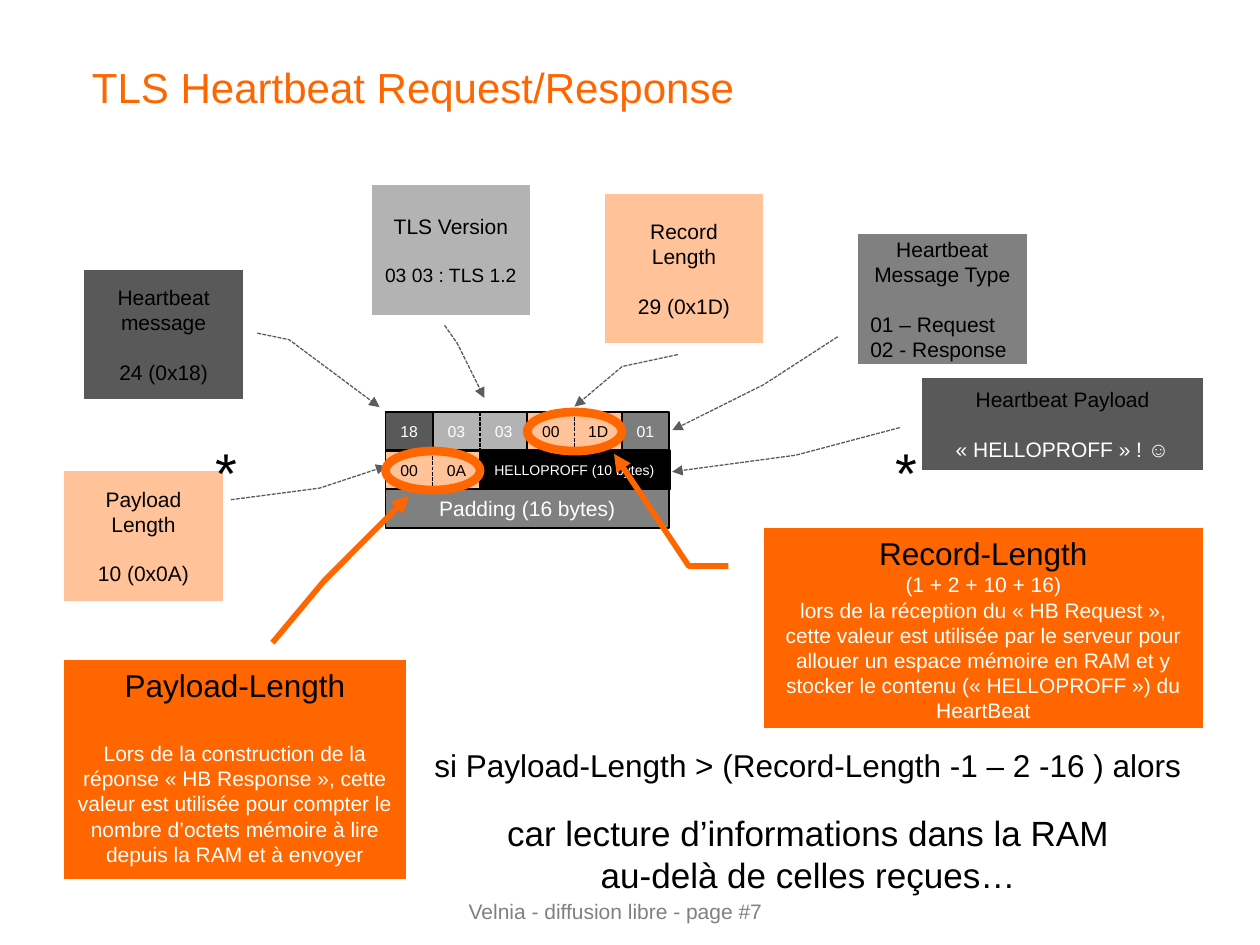
from lxml import etree
from pptx import Presentation
from pptx import util as u
from pptx.dml.color import RGBColor
from pptx.enum import dml, shapes, text
from pptx.oxml.ns import qn

BLACK = RGBColor(0x00, 0x00, 0x00)
WHITE = RGBColor(0xFF, 0xFF, 0xFF)
ORANGE = RGBColor(0xFF, 0x66, 0x00)
PEACH = RGBColor(0xFF, 0xC2, 0x99)
DARK = RGBColor(0x59, 0x59, 0x59)
LEADER = RGBColor(0x5C, 0x5C, 0x5C)
TYPE_GRAY = RGBColor(0x7D, 0x7D, 0x7D)
GRAY = RGBColor(0x80, 0x80, 0x80)
LIGHT = RGBColor(0xB3, 0xB3, 0xB3)

LEFT, CENTER = text.PP_ALIGN.LEFT, text.PP_ALIGN.CENTER
TOP, MIDDLE = text.MSO_ANCHOR.TOP, text.MSO_ANCHOR.MIDDLE
DASH = dml.MSO_LINE.SQUARE_DOT
LINE_GAP = 13.8  # height of one 12 pt line

PACKET_LEFT, PACKET_WIDTH = 3.06, 2.25
BYTE_WIDTH, BYTE_HEIGHT = PACKET_WIDTH / 6, 0.3
ROW_TOPS = (3.27, 3.58, 3.88)


def write(paragraph, content, size=12, color=BLACK, align=CENTER, gap=0):
    paragraph.text = content
    paragraph.alignment = align
    paragraph.space_before = u.Pt(gap)
    for run in paragraph.runs:
        run.font.name = "Arial"
        run.font.size = u.Pt(size)
        run.font.color.rgb = color


def inches(*lengths):
    return [u.Inches(length) for length in lengths]


class PacketSlide:
    """Holds the slide and draws its kinds of element."""

    def __init__(self, slide):
        self.slide = slide

    def title(self, content, *box):
        shape = self.slide.shapes.title
        shape.left, shape.top, shape.width, shape.height = inches(*box)
        frame = shape.text_frame
        frame.vertical_anchor = TOP
        frame.margin_left = frame.margin_right = u.Inches(0.08)
        frame.margin_top = frame.margin_bottom = u.Inches(0.04)
        write(frame.paragraphs[0], content, size=24, color=ORANGE, align=LEFT)

    def label(self, content, *box, anchor=TOP, margin=0.1, **style):
        frame = self.slide.shapes.add_textbox(*inches(*box)).text_frame
        frame.word_wrap = True
        frame.vertical_anchor = anchor
        frame.margin_left = frame.margin_right = u.Inches(margin)
        write(frame.paragraphs[0], content, **style)

    def shape(self, kind, box, fill, line, width, dash=None):
        shape = self.slide.shapes.add_shape(kind, *inches(*box))
        shape.shadow.inherit = False
        if fill is None:
            shape.fill.background()
        else:
            shape.fill.solid()
            shape.fill.fore_color.rgb = fill
        shape.line.color.rgb = line
        shape.line.width = u.Pt(width)
        shape.line.dash_style = dash
        return shape

    def field(self, content, column, row, span, fill, size=9, line=1, height=BYTE_HEIGHT):
        """Draw a packet field that covers `span` bytes."""
        box = (PACKET_LEFT + column * BYTE_WIDTH, ROW_TOPS[row], span * BYTE_WIDTH, height)
        shape = self.shape(shapes.MSO_SHAPE.RECTANGLE, box, fill, BLACK, line)
        if content:
            shape.text_frame.vertical_anchor = MIDDLE
            shape.text_frame.margin_left = shape.text_frame.margin_right = 0
            write(shape.text_frame.paragraphs[0], content, size=size, color=WHITE)

    def byte_pair(self, values, column, row, fill, color):
        self.field("", column, row, 2, fill)
        top = ROW_TOPS[row]
        for index, value in enumerate(values):
            self.label(value, PACKET_LEFT + (column + index) * BYTE_WIDTH, top,
                       BYTE_WIDTH, BYTE_HEIGHT, anchor=MIDDLE, margin=0, size=9, color=color)
        middle = PACKET_LEFT + (column + 1) * BYTE_WIDTH
        divider = self.slide.shapes.add_connector(
            shapes.MSO_CONNECTOR.STRAIGHT, *inches(middle, top, middle, top + BYTE_HEIGHT))
        divider.line.color.rgb = BLACK
        divider.line.width = u.Pt(0.75)
        divider.line.dash_style = DASH
        etree.SubElement(divider._element.spPr, qn("a:effectLst"))

    def ring(self, column, row):
        box = (PACKET_LEFT + column * BYTE_WIDTH, ROW_TOPS[row], 2 * BYTE_WIDTH, 0.31)
        self.shape(shapes.MSO_SHAPE.OVAL, box, None, ORANGE, 5)

    def callout(self, box, bends, fill, paragraphs, line=LEADER, width=0.75,
                dash=DASH, flip=True, anchor=MIDDLE):
        """Draw a box with a bent arrow; bends are y, x pairs relative to the box."""
        shape = self.shape(shapes.MSO_SHAPE.LINE_CALLOUT_2_NO_BORDER, box, fill, line, width, dash)
        for index, bend in enumerate(bends):
            shape.adjustments[index] = bend
        if flip:
            shape._element.spPr.find(qn("a:xfrm")).set("flipH", "1")
        outline = shape._element.spPr.find(qn("a:ln"))
        etree.SubElement(outline, qn("a:tailEnd"), type="triangle")
        frame = shape.text_frame
        frame.word_wrap = True
        frame.vertical_anchor = anchor
        for index, (content, style) in enumerate(paragraphs):
            paragraph = frame.add_paragraph() if index else frame.paragraphs[0]
            write(paragraph, content, **style)


def main():
    presentation = Presentation()
    presentation.slide_width, presentation.slide_height = inches(10, 7.5)
    page = PacketSlide(presentation.slides.add_slide(presentation.slide_layouts[5]))

    page.label("Velnia - diffusion libre - page #7", 2.64, 7.08, 4.49, 0.3, color=GRAY)
    page.title("TLS Heartbeat Request/Response", 0.65, 0.45, 8.67, 0.78)

    page.field("HELLOPROFF (10 bytes)", 2, 1, 4, BLACK, size=8, line=2)
    page.field("Padding (16 bytes)", 0, 2, 6, GRAY, size=12, height=0.31)
    page.field("18", 0, 0, 1, DARK)
    page.byte_pair(("00", "1D"), 3, 0, PEACH, BLACK)
    page.byte_pair(("03", "03"), 1, 0, LIGHT, WHITE)
    page.field("01", 5, 0, 1, TYPE_GRAY)
    page.byte_pair(("00", "0A"), 0, 1, PEACH, BLACK)

    spaced = {"gap": LINE_GAP}
    field_notes = [
        ((0.67, 2.14, 1.26, 1.03), (0.49, -0.09, 0.54, -0.29, 1.06, -0.86), DARK,
         [("Heartbeat message", {}), ("24 (0x18)", spaced)]),
        ((4.8, 1.54, 1.26, 1.18), (1.08, 0.54, 1.16, 0.89, 1.43, 1.19), PEACH,
         [("Record Length", {}), ("29 (0x1D)", spaced)]),
        ((2.95, 1.47, 1.26, 1.03), (1.08, 0.54, 1.22, 0.46, 1.64, 0.29), LIGHT,
         [("TLS Version", {}), ("03 03 : TLS 1.2", {"size": 11, **spaced})]),
        ((6.81, 1.86, 1.34, 1.03), (0.79, 1.12, 1.16, 1.56, 1.51, 2.1), GRAY,
         [("Heartbeat Message Type", {}),
          ("01 – Request\v02 - Response", {"align": LEFT, **spaced})]),
        ((0.51, 3.74, 1.26, 1.03), (0.22, -0.05, 0.13, -0.61, -0.04, -1.03), PEACH,
         [("Payload Length", {}), ("10 (0x0A)", spaced)]),
        ((7.32, 3, 2.23, 0.73), (0.54, 1.08, 0.84, 1.45, 1.02, 1.89), DARK,
         [("Heartbeat Payload", {}),
          ("« HELLOPROFF » ! ☺", {"color": WHITE, **spaced})]),
    ]
    for note in field_notes:
        page.callout(*note)

    heading, body = {"size": 18}, {"color": WHITE}
    orange = {"line": ORANGE, "width": 3.25, "dash": None, "flip": False, "anchor": TOP}
    page.ring(3, 0)
    page.callout(
        (6.06, 4.19, 3.49, 1.59), (0.19, -0.08, 0.19, -0.17, -0.37, -0.34), ORANGE,
        [("Record-Length", heading), ("(1 + 2 + 10 + 16)", body),
         ("lors de la réception du « HB Request », cette valeur est utilisée par le "
          "serveur pour allouer un espace mémoire en RAM et y stocker le contenu "
          "(« HELLOPROFF ») du HeartBeat", body)], **orange)
    page.ring(0, 1)
    page.callout(
        (0.51, 5.24, 2.71, 1.74), (-0.08, 0.61, -0.36, 0.76, -0.75, 1.01), ORANGE,
        [("Payload-Length", heading),
         ("Lors de la construction de la réponse « HB Response », cette valeur est "
          "utilisée pour compter le nombre d’octets mémoire à lire depuis la RAM et "
          "à envoyer", {"gap": 20.7, **body})], **orange)

    page.label("si Payload-Length > (Record-Length -1 – 2 -16 ) alors",
               3.35, 5.87, 6.14, 0.71, size=18, align=LEFT)
    page.label("car lecture d’informations dans la RAM au-delà de celles reçues…",
               3.71, 6.39, 5.41, 0.77, size=20)
    for left in (1.61, 7.01):
        page.label("*", left, 3.42, 0.31, 0.64, size=32, align=LEFT)

    presentation.save("out.pptx")


if __name__ == "__main__":
    main()
